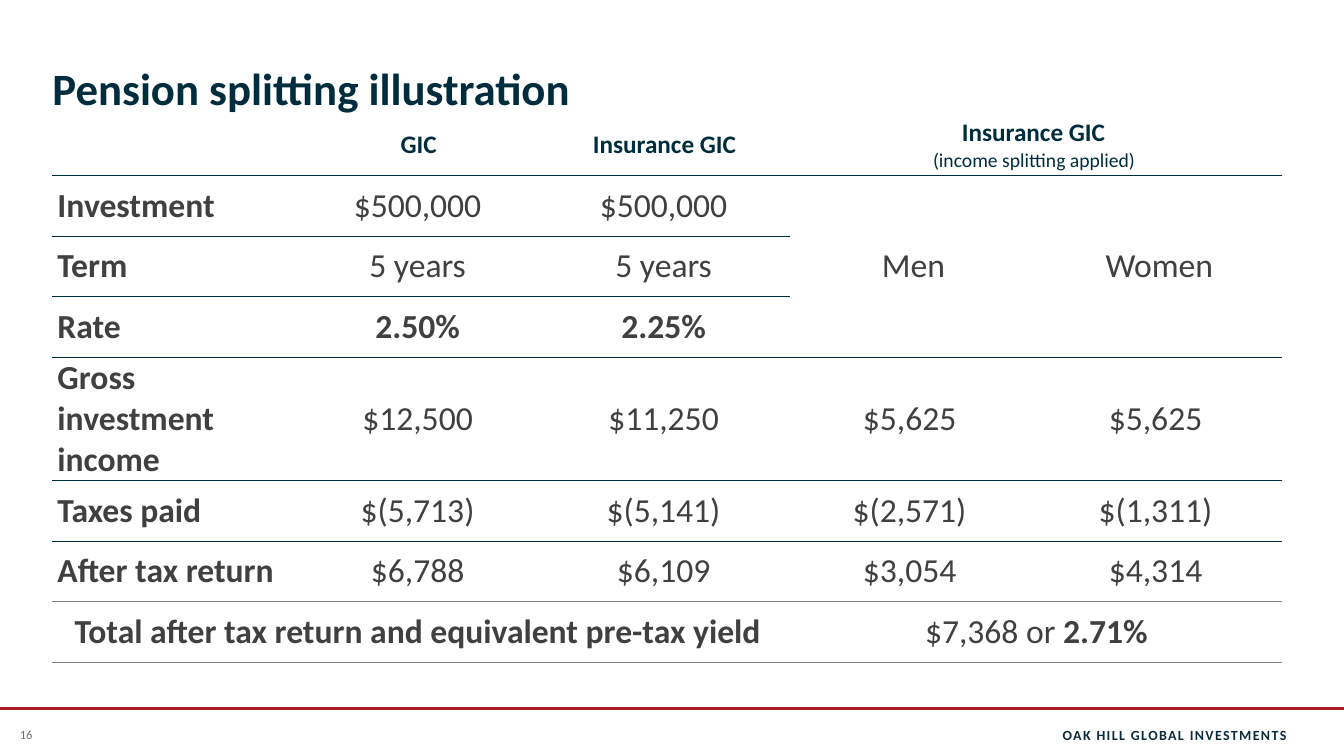
from dataclasses import dataclass

from lxml.etree import SubElement
from pptx import Presentation
from pptx.dml.color import RGBColor as RGB
from pptx.enum.shapes import MSO_CONNECTOR as CONN
from pptx.enum.text import MSO_ANCHOR as ANCHOR, PP_ALIGN as ALIGN
from pptx.oxml import parse_xml
from pptx.oxml.ns import nsdecls, qn
from pptx.util import Inches, Pt

# Content
TITLE = "Pension splitting illustration"
FOOTER = "OAK HILL GLOBAL INVESTMENTS"
PAGE = "16"
ROWS = [
    ("", "GIC", "Insurance GIC", "Insurance GIC\n(income splitting applied)", ""),
    ("Investment", "$500,000", "$500,000", "Men", "Women"),
    ("Term", "5 years", "5 years", "", ""),
    ("Rate", "2.50%", "2.25%", "", ""),
    ("Gross investment income", "$12,500", "$11,250", "$5,625", "$5,625"),
    ("Taxes paid", "$(5,713)", "$(5,141)", "$(2,571)", "$(1,311)"),
    ("After tax return", "$6,788", "$6,109", "$3,054", "$4,314"),
    ("Total after tax return and equivalent pre-tax yield", "", "",
     ("$7,368 or ", "2.71%"), ""),
]
# First and last (row, column) of each merged area
MERGES = [((0, 3), (0, 4)), ((1, 3), (3, 3)), ((1, 4), (3, 4)),
          ((7, 0), (7, 2)), ((7, 3), (7, 4))]
UNSPACED = {"Men", "Women"}
NBSP = chr(160)  # ends most table entries
RATE, TOTAL = 3, len(ROWS) - 1


@dataclass(frozen=True)
class Theme:
    font: str = "Calibri"
    navy: str = "002D3D"
    footer: str = "0D2B3C"
    body: str = "404040"
    red: str = "A91E22"
    gray: str = "767171"
    rule: str = "7F7F7F"
    title_pt: int = 32
    body_pt: int = 24
    head_pt: int = 18
    note_pt: int = 14
    footer_pt: int = 10
    page_pt: int = 9


T = Theme()


def style(p, size, color, bold=False, align=ALIGN.CENTER):
    p.alignment = align
    for r in p.runs:
        f = r.font
        f.name, f.size, f.bold = T.font, Pt(size), bold
        f.color.rgb = RGB.from_string(color)


def add_label(slide, text, box, size, color, bold, align):
    tf = slide.shapes.add_textbox(*map(Inches, box)).text_frame
    tf.word_wrap, tf.vertical_anchor = True, ANCHOR.MIDDLE
    tf.text = text
    style(tf.paragraphs[0], size, color, bold, align)
    return tf


def add_border(cell, side, color):
    ln = parse_xml(
        f'<a:{side} {nsdecls("a")} w="6350"><a:solidFill>'
        f'<a:srgbClr val="{color}"/></a:solidFill></a:{side}>')
    pr = cell._tc.get_or_add_tcPr()
    fill_at = next(i for i, e in enumerate(pr) if e.tag == qn("a:noFill"))
    pr.insert(fill_at, ln)


def fill_cell(cell, row, col, text):
    cell.fill.background()
    cell.vertical_anchor = ANCHOR.MIDDLE
    cell.margin_left = cell.margin_right = Inches(0.05)
    cell.margin_top = cell.margin_bottom = 0
    if not text:
        return
    tf = cell.text_frame
    size, color = (T.head_pt, T.navy) if row == 0 else (T.body_pt, T.body)
    if isinstance(text, tuple):
        p = tf.paragraphs[0]
        for part in text:
            p.add_run().text = part
        style(p, size, color)
        p.runs[-1].font.bold = True
        return
    tf.text = text if text in UNSPACED else NBSP.join(text.split("\n") + [""]) \
        if "\n" not in text else text.replace("\n", NBSP + "\n") + NBSP
    bold = row in (0, RATE) or col == 0
    left = col == 0 and row != TOTAL
    for i, p in enumerate(tf.paragraphs):
        style(p, T.note_pt if i else size, color, bold and i == 0,
              ALIGN.LEFT if left else ALIGN.CENTER)


def build_table(slide):
    n_cols = len(ROWS[0])
    frame = slide.shapes.add_table(len(ROWS), n_cols, Inches(0.52), Inches(1.14),
                                   Inches(12.2), Inches(4.81))
    table = frame.table
    table.first_row = table.horz_banding = False
    # Plain style without grid
    table._tbl.tblPr.find(qn("a:tableStyleId")).text = \
        "{2D5ABB26-0587-4C30-8999-92F81FD0307C}"
    for first, last in MERGES:
        table.cell(*first).merge(table.cell(*last))
    for row, texts in enumerate(ROWS):
        for col, text in enumerate(texts):
            cell = table.cell(row, col)
            fill_cell(cell, row, col, text)
            inside_merge = col >= 3 and row in (2, 3)
            if row and not inside_merge:
                add_border(cell, "lnT", T.rule if row == TOTAL else T.navy)
            if row == TOTAL:
                add_border(cell, "lnB", T.rule)


def main():
    prs = Presentation()
    prs.slide_width, prs.slide_height = Inches(13.33), Inches(7.5)
    slide = prs.slides.add_slide(prs.slide_layouts[5])

    # Title
    title = slide.shapes.title
    title.left, title.top = Inches(0.52), Inches(0)
    title.width, title.height = Inches(12.2), Inches(1.14)
    tf = title.text_frame
    tf.margin_left = tf.margin_right = tf.margin_top = tf.margin_bottom = 0
    tf.vertical_anchor = ANCHOR.BOTTOM
    tf.text = TITLE
    style(tf.paragraphs[0], T.title_pt, T.navy, True, ALIGN.LEFT)

    build_table(slide)

    # Footer rule, name and page number
    rule = slide.shapes.add_connector(CONN.STRAIGHT, Inches(0), Inches(7.03),
                                      Inches(13.33), Inches(7.03))
    rule.line.color.rgb, rule.line.width = RGB.from_string(T.red), Pt(2.25)
    SubElement(rule._element.spPr, qn("a:effectLst"))
    tf = add_label(slide, FOOTER, (9.67, 7.09, 3.09, 0.4), T.footer_pt,
                   T.footer, True, ALIGN.RIGHT)
    tf.margin_left = tf.margin_right = 0
    tf.paragraphs[0].runs[0].font._element.set("spc", "100")
    add_label(slide, PAGE, (0, 7.09, 0.52, 0.4), T.page_pt, T.gray, False,
              ALIGN.CENTER)

    prs.save("out.pptx")


if __name__ == "__main__":
    main()
